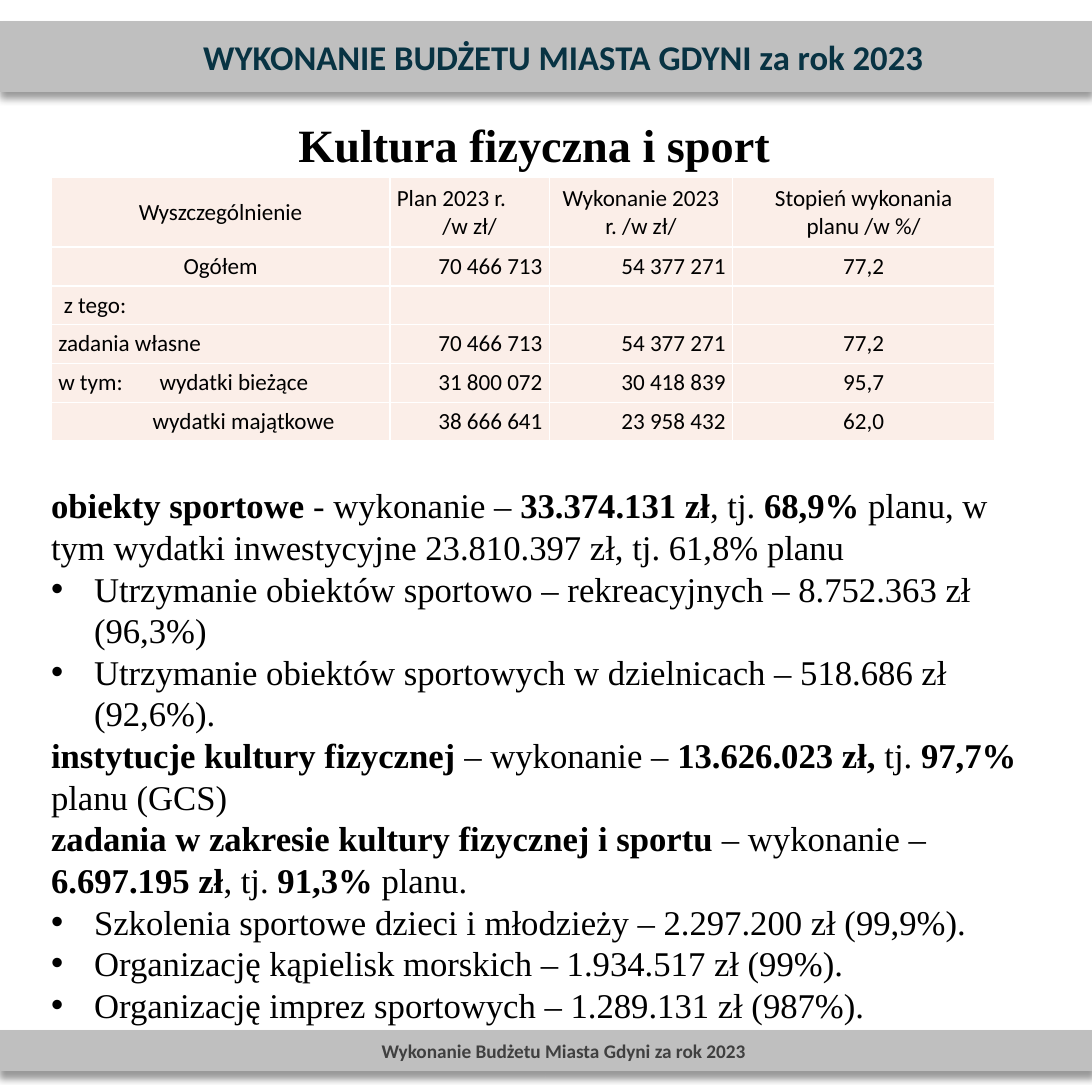
"""Build the slide on sport spending in the 2023 city budget."""
from typing import NamedTuple

from lxml import etree
from pptx import Presentation
from pptx.dml.color import RGBColor
from pptx.enum.shapes import MSO_SHAPE
from pptx.enum.text import MSO_ANCHOR, MSO_AUTO_SIZE, PP_ALIGN
from pptx.oxml.ns import qn
from pptx.util import Inches, Pt

RECT = MSO_SHAPE.RECTANGLE
LEFT, MID, RIGHT = PP_ALIGN.LEFT, PP_ALIGN.CENTER, PP_ALIGN.RIGHT
TOP, CENTRE = MSO_ANCHOR.TOP, MSO_ANCHOR.MIDDLE
FIXED = MSO_AUTO_SIZE.NONE
SANS, SERIF = "Calibri", "Times New Roman"
SIDE = 7.87
GREY, CREAM, WHITE, BLACK = "BFBFBF", "FBEEE8", "FFFFFF", "000000"


class Face(NamedTuple):
    """Look of a run of text."""
    font: str
    size: float
    tint: str = BLACK


class Band(NamedTuple):
    """Grey strip across the slide."""
    top: float
    high: float
    text: str
    face: Face


class Item(NamedTuple):
    """Paragraph whose texts alternate bold and plain, or a bullet."""
    texts: tuple[str, ...]
    dot: bool = False


class Line(NamedTuple):
    """Label in the first column, with its indent and tab stop in inches."""
    text: str
    align: PP_ALIGN = LEFT
    dent: float = 0
    stop: float = 0


class Row(NamedTuple):
    """Table row: a label, two sums and a share."""
    label: Line
    plan: str = ""
    done: str = ""
    share: str = ""


BANDS = [
    Band(7.43, 0.28, "Wykonanie Budżetu Miasta Gdyni za rok 2023", Face(SANS, 10, "404040")),
    Band(0.16, 0.5, "WYKONANIE BUDŻETU MIASTA GDYNI za rok 2023", Face(SANS, 18, "083343")),
]
HEADS = [
    [Line("Wyszczególnienie", MID)],
    [Line("Plan 2023 r."), Line("/w zł/", MID)],
    [Line("Wykonanie 2023 r. /w zł/", MID)],
    [Line("Stopień wykonania planu /w %/", MID)],
]
ROWS = [
    Row(Line("Ogółem", MID), "70 466 713", "54 377 271", "77,2"),
    Row(Line("z tego:", dent=0.04)),
    Row(Line("zadania własne"), "70 466 713", "54 377 271", "77,2"),
    Row(Line("w tym:\twydatki bieżące", stop=0.73), "31 800 072", "30 418 839", "95,7"),
    Row(Line("wydatki majątkowe", dent=0.68), "38 666 641", "23 958 432", "62,0"),
]
WIDTHS = [2.44, 1.15, 1.32, 1.89]
ITEMS = [
    Item(("obiekty sportowe ", "- wykonanie – ", "33.374.131 zł", ", tj.", " 68,9% ",
          "planu, w tym wydatki inwestycyjne 23.810.397 zł, tj. 61,8% planu")),
    Item(("Utrzymanie obiektów sportowo – rekreacyjnych – 8.752.363 zł (96,3%)",), True),
    Item(("Utrzymanie obiektów sportowych w dzielnicach – 518.686 zł (92,6%).",), True),
    Item(("instytucje kultury fizycznej ", "– wykonanie – ", "13.626.023 zł, ", "tj. ",
          "97,7%", " planu (GCS)")),
    Item(("zadania w zakresie kultury fizycznej i sportu", " – wykonanie – ",
          "6.697.195 zł", ", tj.", " 91,3% ", "planu.")),
    Item(("Szkolenia sportowe dzieci i młodzieży – 2.297.200 zł (99,9%).",), True),
    Item(("Organizację kąpielisk morskich – 1.934.517 zł (99%).",), True),
    Item(("Organizację imprez sportowych – 1.289.131 zł (987%).",), True),
]


def paint(form, tint: str) -> None:
    """Give a fill a solid colour."""
    form.solid()
    form.fore_color.rgb = RGBColor.from_string(tint)


def write(para, text: str, face: Face, bold: bool = False) -> None:
    """Add one run to a paragraph."""
    run = para.add_run()
    run.text = text
    run.font.name, run.font.size, run.font.bold = face.font, Pt(face.size), bold
    run.font.color.rgb = RGBColor.from_string(face.tint)


def shade(shape) -> None:
    """Cast a soft shadow straight down."""
    shape.shadow.inherit = False
    glow = shape._element.spPr.find(qn("a:effectLst"))
    cast = etree.SubElement(glow, qn("a:outerShdw"), blurRad=str(Pt(4)), dist=str(Pt(3)),
                            dir="5400000", rotWithShape="0")
    tone = etree.SubElement(cast, qn("a:srgbClr"), val=BLACK)
    etree.SubElement(tone, qn("a:alpha"), val="40000")


def draw_band(slide, band: Band) -> None:
    """Draw a strip with its centred text."""
    shape = slide.shapes.add_shape(RECT, 0, Inches(band.top), Inches(SIDE), Inches(band.high))
    paint(shape.fill, GREY)
    paint(shape.line.fill, GREY)
    shape.line.width = Pt(1)
    shade(shape)
    frame = shape.text_frame
    frame.word_wrap, frame.vertical_anchor = True, CENTRE
    frame.margin_left = Inches(0.35)
    para = frame.paragraphs[0]
    para.alignment = MID
    write(para, band.text, band.face, True)


def draw_title(slide, text: str) -> None:
    """Place and fill the title."""
    title = slide.shapes.title
    title.left, title.top = Inches(0.19), Inches(0.79)
    title.width, title.height = Inches(7.32), Inches(0.5)
    frame = title.text_frame
    frame.auto_size, frame.vertical_anchor, frame.word_wrap = FIXED, TOP, True
    para = frame.paragraphs[0]
    para.alignment = MID
    write(para, text, Face(SERIF, 24), True)


def draw_list(slide, items: list[Item]) -> None:
    """Write the paragraphs and bullets below the table."""
    box = slide.shapes.add_textbox(Inches(0.27), Inches(3.44), Inches(7.34), Inches(4.04))
    frame = box.text_frame
    frame.word_wrap = True
    for spot, item in enumerate(items):
        para = frame.add_paragraph() if spot else frame.paragraphs[0]
        if item.dot:
            props = para._p.get_or_add_pPr()
            props.set("marL", str(Inches(0.31)))
            props.set("indent", str(-Inches(0.31)))
            etree.SubElement(props, qn("a:buFont"), typeface="Arial")
            etree.SubElement(props, qn("a:buChar"), char="•")
        for turn, text in enumerate(item.texts):
            write(para, text, Face(SERIF, 18), turn % 2 == 0 and not item.dot)


def fill_cell(cell, lines: list[Line]) -> None:
    """Format a cell and write its lines."""
    cell.margin_left = cell.margin_right = Inches(0.05)
    cell.margin_top = cell.margin_bottom = Inches(0.02)
    cell.vertical_anchor = CENTRE
    props = cell._tc.get_or_add_tcPr()
    for side in ("lnL", "lnR", "lnT", "lnB"):
        edge = etree.SubElement(props, qn(f"a:{side}"), w=str(Pt(1)))
        tone = etree.SubElement(edge, qn("a:solidFill"))
        etree.SubElement(tone, qn("a:srgbClr"), val=WHITE)
    paint(cell.fill, CREAM)
    frame = cell.text_frame
    for spot, line in enumerate(lines):
        para = frame.add_paragraph() if spot else frame.paragraphs[0]
        para.alignment = line.align
        form = para._p.get_or_add_pPr()
        form.set("marL", str(Inches(line.dent)))
        if line.stop:
            tabs = etree.SubElement(form, qn("a:tabLst"))
            etree.SubElement(tabs, qn("a:tab"), pos=str(Inches(line.stop)), algn="l")
        if line.text:
            write(para, line.text, Face(SANS, 12))
        else:
            etree.SubElement(para._p, qn("a:endParaRPr"), sz="1200")


def draw_table(slide) -> None:
    """Draw the table of planned and actual spending."""
    grid = [HEADS] + [[[row.label], [Line(row.plan, RIGHT)], [Line(row.done, RIGHT)],
                       [Line(row.share, MID)]] for row in ROWS]
    table = slide.shapes.add_table(len(grid), len(WIDTHS), Inches(0.37), Inches(1.28),
                                   Inches(sum(WIDTHS)), Inches(1.89)).table
    table.first_row = table.horz_banding = False
    for col, wide in zip(table.columns, WIDTHS):
        col.width = Inches(wide)
    for y, cells in enumerate(grid):
        table.rows[y].height = Inches(0.28 if y else 0.5)
        for x, lines in enumerate(cells):
            fill_cell(table.cell(y, x), lines)


def main() -> None:
    """Build and save the slide."""
    deck = Presentation()
    deck.slide_width = deck.slide_height = Inches(SIDE)
    slide = deck.slides.add_slide(deck.slide_layouts[5])
    for band in BANDS:
        draw_band(slide, band)
    draw_title(slide, "Kultura fizyczna i sport")
    draw_list(slide, ITEMS)
    draw_table(slide)
    deck.save("out.pptx")


if __name__ == "__main__":
    main()
